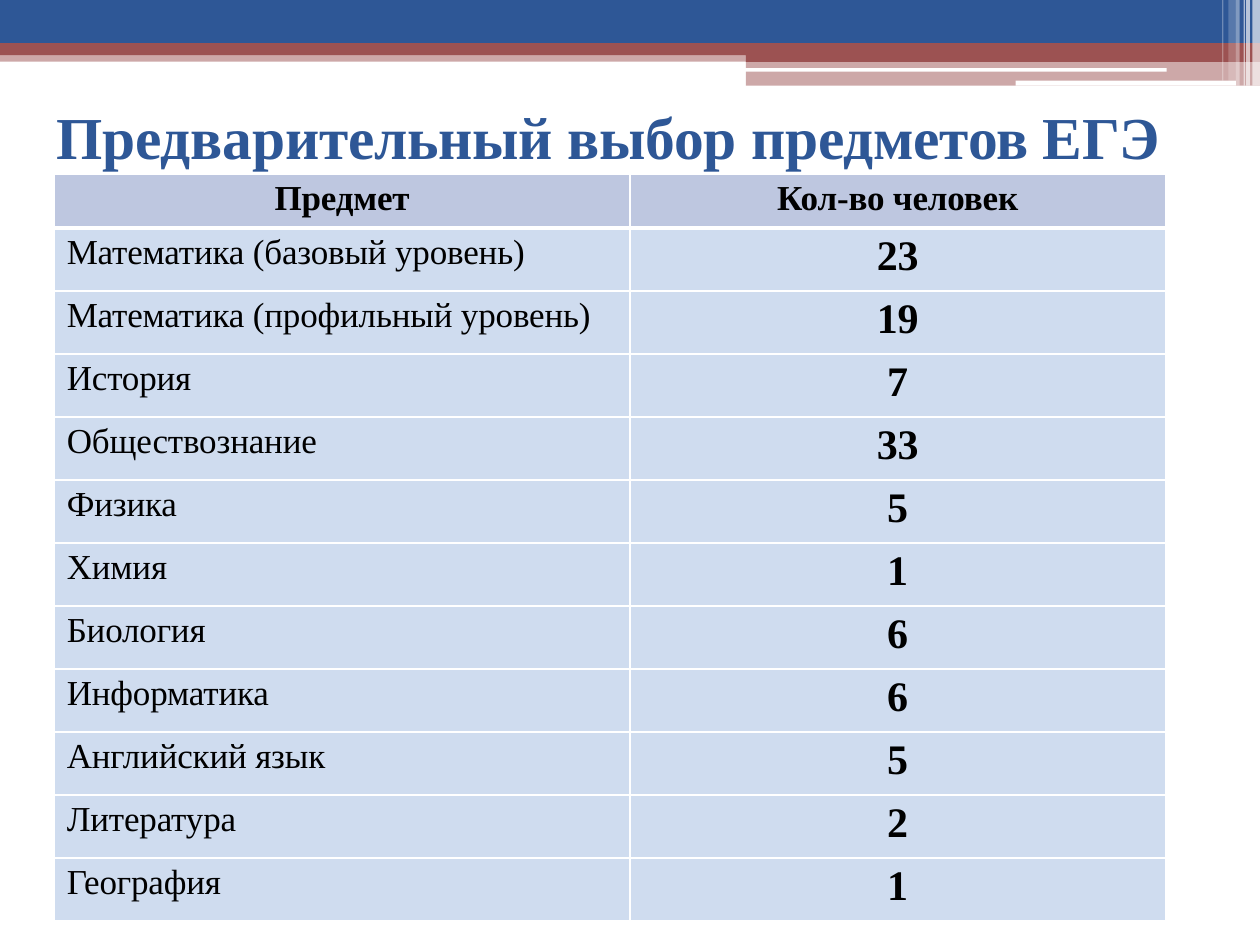
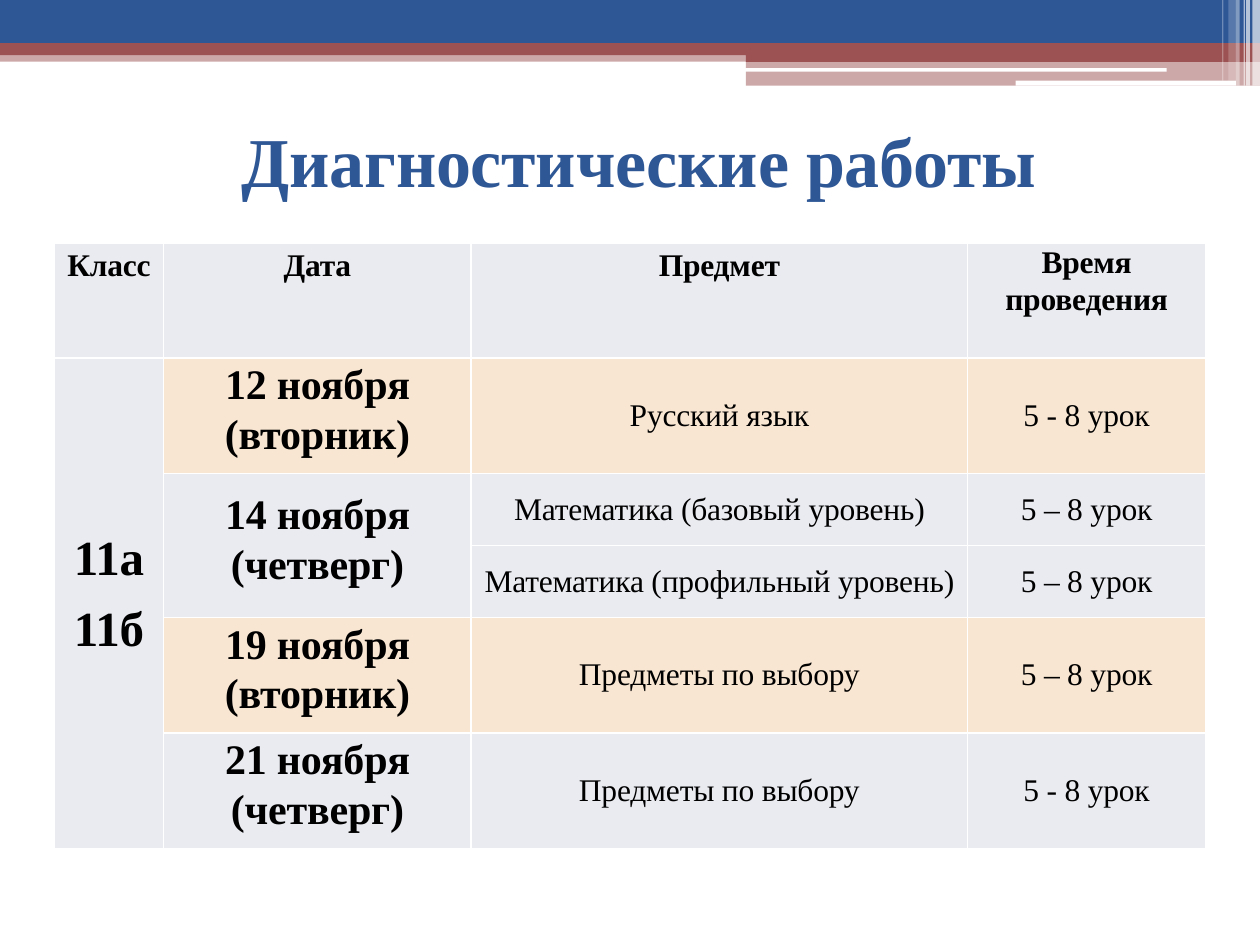
from dataclasses import dataclass
from typing import Any

from lxml.etree import SubElement
from pptx import Presentation
from pptx.dml.color import RGBColor
from pptx.enum.shapes import MSO_SHAPE as Shape
from pptx.enum.text import MSO_ANCHOR as Anchor, PP_ALIGN as Align
from pptx.oxml.ns import qn
from pptx.util import Inches, Pt

BLUE = RGBColor(0x2E, 0x57, 0x96)
RED = RGBColor(0x9C, 0x52, 0x52)
WHITE = RGBColor(0xFF, 0xFF, 0xFF)
BLACK = RGBColor(0x00, 0x00, 0x00)
HEADER_BLUE = RGBColor(0xBE, 0xC7, 0xE0)
ROW_BLUE = RGBColor(0xCF, 0xDC, 0xEF)
GREY = RGBColor(0xEA, 0xEB, 0xF1)
PEACH = RGBColor(0xF9, 0xE6, 0xD2)

FONT = "Times New Roman"
TRACKING = -10  # hundredths of a point

# Slide grid: 100 columns by 75 rows
SLIDE_W, SLIDE_H = Inches(10), Inches(7.5)
COLUMN, ROW = SLIDE_W / 100, SLIDE_H / 75


def cols(n: float) -> int:
    return round(n * COLUMN)


def rows(n: float) -> int:
    return round(n * ROW)


@dataclass(frozen=True)
class Band:
    left: float
    top: float
    width: float
    height: float
    color: RGBColor
    opacity: int = 100


@dataclass(frozen=True)
class Title:
    text: str
    left: float
    top: float
    width: float
    height: float
    size: int


@dataclass(frozen=True)
class Cell:
    text: str
    fill: RGBColor
    size: int = 18
    bold: bool = False
    align: Align = Align.CENTER
    anchor: Anchor = Anchor.TOP
    left: float = 0
    top: float = 0.4
    bottom: float = 0
    spacing: float = 1
    row_span: int = 1


@dataclass(frozen=True)
class Grid:
    left: float
    top: float
    columns: list[float]
    heights: list[float]
    cells: list[list[Cell | None]]
    header_rule: float = 1


RED_OUTLINE = [(100, 3.4), (0, 3.4), (0, 4.4), (59.2, 4.4), (59.2, 4.9), (100, 4.9)]
BANDS = [
    Band(0, 4.4, 59.2, 0.5, RED, 50),
    Band(0, 0, 100, 3.4, BLUE),
    Band(59.2, 4.8, 40.8, 2, RED, 50),
    Band(59.1, 5.4, 33.5, 0.3, WHITE),
    Band(80.6, 6.4, 17.5, 0.4, WHITE),
    Band(98.9, 0, 0.3, 6.8, WHITE, 65),
    Band(99.4, 0, 0.6, 6.8, WHITE, 65),
    Band(98.7, 0, 0.1, 6.8, WHITE, 60),
    Band(98.1, 0, 0.3, 6.8, WHITE, 40),
    Band(97.5, 0, 0.6, 6.4, WHITE, 20),
    Band(97, 0, 0.1, 6.4, WHITE, 30),
]

SUBJECTS = [
    ("Математика (базовый уровень)", 23),
    ("Математика (профильный уровень)", 19),
    ("История", 7),
    ("Обществознание", 33),
    ("Физика", 5),
    ("Химия", 1),
    ("Биология", 6),
    ("Информатика", 6),
    ("Английский язык", 5),
    ("Литература", 2),
    ("География", 1),
]


def paint(sp: Any, color: RGBColor, opacity: int = 100) -> None:
    sp.shadow.inherit = False
    sp.fill.solid()
    sp.fill.fore_color.rgb = color
    sp.line.fill.background()
    if opacity < 100:
        clr = next(sp.element.spPr.iter(qn("a:srgbClr")))
        SubElement(clr, qn("a:alpha"), val=str(opacity * 1000))


def draw_bands(slide: Any) -> None:
    start, *rest = [(cols(x), rows(y)) for x, y in RED_OUTLINE]
    builder = slide.shapes.build_freeform(*start)
    builder.add_line_segments(rest)
    paint(builder.convert_to_shape(), RED)
    for b in BANDS:
        sp = slide.shapes.add_shape(Shape.RECTANGLE, cols(b.left), rows(b.top),
                                    cols(b.width), rows(b.height))
        paint(sp, b.color, b.opacity)


def write(tf: Any, text: str, size: int, bold: bool, color: RGBColor,
          align: Align = Align.LEFT, spacing: float = 1) -> None:
    """Fill the frame with one paragraph for each line of the text."""
    tf.word_wrap = True
    style = {"name": FONT, "size": Pt(size), "bold": bold}
    for i, line in enumerate(text.split("\n")):
        p = tf.paragraphs[0] if i == 0 else tf.add_paragraph()
        p.alignment = align
        if spacing != 1:
            p.line_spacing = spacing
        if i:
            p.space_before = Pt(1)
        r = p.add_run()
        r.text = line
        for key, value in style.items():
            setattr(r.font, key, value)
        r.font.color.rgb = color
        r._r.get_or_add_rPr().set("spc", str(TRACKING))


def set_margins(target: Any, left: float = 0, top: float = 0, bottom: float = 0) -> None:
    margins = {"left": cols(left), "top": rows(top), "right": 0, "bottom": rows(bottom)}
    for side, value in margins.items():
        setattr(target, f"margin_{side}", value)


def draw_title(slide: Any, t: Title) -> None:
    sp = slide.shapes.add_textbox(cols(t.left), rows(t.top), cols(t.width), rows(t.height))
    set_margins(sp.text_frame, left=0.1, top=0.7)
    write(sp.text_frame, t.text, t.size, True, BLUE)


def add_borders(cell: Any, widths: dict[str, float]) -> None:
    tc_pr = cell._tc.get_or_add_tcPr()
    for side, width in widths.items():
        ln = SubElement(tc_pr, qn(f"a:ln{side}"), w=str(Pt(width)))
        SubElement(SubElement(ln, qn("a:solidFill")), qn("a:srgbClr"), val=str(WHITE))


def draw_table(slide: Any, grid: Grid) -> None:
    frame = slide.shapes.add_table(
        len(grid.heights), len(grid.columns), cols(grid.left), rows(grid.top),
        cols(sum(grid.columns)), rows(sum(grid.heights)))
    table = frame.table
    table.first_row = table.horz_banding = False
    for column, width in zip(table.columns, grid.columns):
        column.width = cols(width)
    for row, height in zip(table.rows, grid.heights):
        row.height = rows(height)
    for i, line in enumerate(grid.cells):
        for j, item in enumerate(line):
            cell = table.cell(i, j)
            add_borders(cell, {"L": 1, "R": 1,
                               "T": grid.header_rule if i == 1 else 1,
                               "B": grid.header_rule if i == 0 else 1})
            cell.fill.solid()
            cell.fill.fore_color.rgb = item.fill if item else GREY
            if item is None:
                continue
            if item.row_span > 1:
                cell.merge(table.cell(i + item.row_span - 1, j))
            set_margins(cell, item.left, item.top, item.bottom)
            cell.vertical_anchor = item.anchor
            write(cell.text_frame, item.text, item.size, item.bold, BLACK,
                  item.align, item.spacing)


def subject_grid() -> Grid:
    header = [Cell(text, HEADER_BLUE, 20, True) for text in ("Предмет", "Кол-во человек")]
    body = [[Cell(name, ROW_BLUE, 20, align=Align.LEFT, left=1),
             Cell(str(count), ROW_BLUE, 24, True)] for name, count in SUBJECTS]
    return Grid(4.3, 13.8, [45.7, 42.5], [4.3] + [5] * len(body), [header, *body], 3)


def schedule_grid() -> Grid:
    def date(text: str, fill: RGBColor, top: float = 0.1, row_span: int = 1) -> Cell:
        return Cell(text, fill, 24, True, top=top, spacing=1.07, row_span=row_span)

    def exam(subject: str, lessons: str, fill: RGBColor) -> list[Cell]:
        return [Cell(text, fill, anchor=Anchor.MIDDLE, top=0) for text in (subject, lessons)]

    header = [Cell(text, GREY, bold=True) for text in ("Класс", "Дата", "Предмет")]
    header.append(Cell("Время\nпроведения", GREY, bold=True, top=0.2))
    classes = Cell("11а 11б", GREY, 28, True, anchor=Anchor.MIDDLE, top=0, bottom=2.7,
                   spacing=1.31, row_span=5)
    body = [
        [classes, date("12 ноября (вторник)", PEACH),
         *exam("Русский язык", "5 - 8 урок", PEACH)],
        [None, date("14 ноября (четверг)", GREY, 1.2, 2),
         *exam("Математика (базовый уровень)", "5 – 8 урок", GREY)],
        [None, None, *exam("Математика (профильный уровень)", "5 – 8 урок", GREY)],
        [None, date("19 ноября (вторник)", PEACH),
         *exam("Предметы по выбору", "5 – 8 урок", PEACH)],
        [None, date("21 ноября (четверг)", GREY),
         *exam("Предметы по выбору", "5 - 8 урок", GREY)],
    ]
    return Grid(4.3, 19.3, [8.7, 24.4, 39.4, 18.9], [9.1, 9.2, 5.7, 5.7, 9.2, 9.2],
                [header, *body])


def main() -> None:
    prs = Presentation()
    prs.slide_width, prs.slide_height = SLIDE_W, SLIDE_H
    pages = [
        (Title("Предварительный выбор предметов ЕГЭ", 4.4, 7.2, 88.5, 5.9, 34), subject_grid()),
        (Title("Диагностические работы", 19.1, 8.6, 63.7, 6.9, 40), schedule_grid()),
    ]
    for title, grid in pages:
        slide = prs.slides.add_slide(prs.slide_layouts[6])
        draw_bands(slide)
        draw_title(slide, title)
        draw_table(slide, grid)
    prs.save("out.pptx")


if __name__ == "__main__":
    main()
